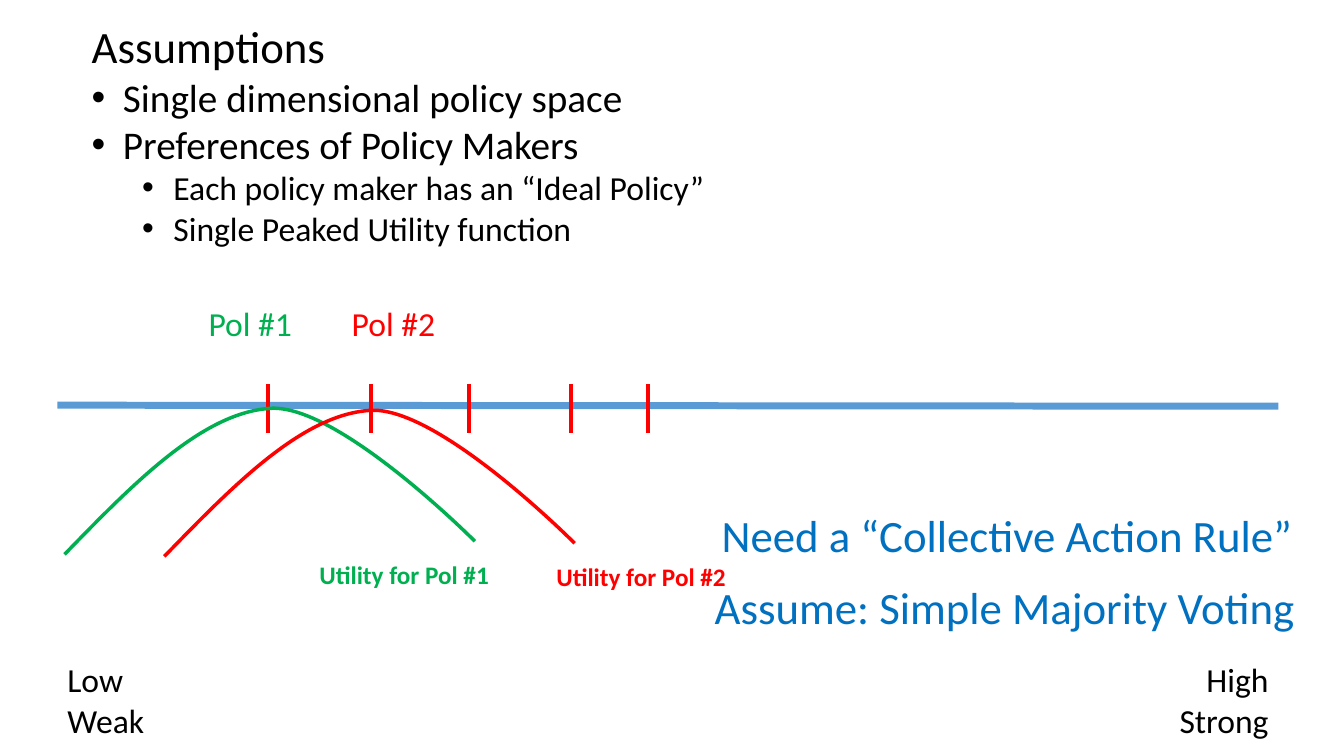
from lxml.etree import Element, SubElement
from pptx import Presentation
from pptx.dml.color import RGBColor
from pptx.enum.shapes import MSO_CONNECTOR
from pptx.enum.text import MSO_ANCHOR, MSO_AUTO_SIZE, PP_ALIGN
from pptx.oxml.ns import qn
from pptx.util import Inches, Pt

FONT = "Calibri"
BLACK, GREEN, RED = "000000", "00B050", "FF0000"
AXIS_BLUE, TEXT_BLUE = "5B9BD5", "0070C0"


def color(hex_code):
    return RGBColor.from_string(hex_code)


def prepare_frame(shape, wrap=True):
    frame = shape.text_frame
    frame.word_wrap = wrap
    frame.auto_size = MSO_AUTO_SIZE.SHAPE_TO_FIT_TEXT
    frame.vertical_anchor = MSO_ANCHOR.TOP
    return frame


def write_line(frame, index, text, size, hex_code, align=PP_ALIGN.LEFT, bold=False):
    para = frame.paragraphs[0] if index == 0 else frame.add_paragraph()
    para.alignment = align
    para.space_before = para.space_after = Pt(0)
    span = para.add_run()
    span.text = text
    span.font.name = FONT
    span.font.size = Pt(size)
    span.font.bold = bold
    span.font.color.rgb = color(hex_code)
    return para


def add_label(page, box, lines, size, hex_code, align=PP_ALIGN.LEFT,
              bold=False, wrap=True):
    label = page.shapes.add_textbox(*map(Inches, box))
    frame = prepare_frame(label, wrap)
    for index, text in enumerate(lines):
        write_line(frame, index, text, size, hex_code, align, bold)


def set_indent(para, margin, indent):
    properties = para._p.get_or_add_pPr()
    properties.set("marL", str(Inches(margin)))
    properties.set("indent", str(Inches(indent)))
    return properties


def set_bullet(para, level):
    para.level = level
    properties = set_indent(para, 0.31 + 0.5 * level, -0.31)
    SubElement(properties, qn("a:buFont")).set("typeface", "Arial")
    SubElement(properties, qn("a:buChar")).set("char", "•")


def add_line(page, start, end, hex_code, weight):
    line = page.shapes.add_connector(
        MSO_CONNECTOR.STRAIGHT, *map(Inches, (*start, *end)))
    line.line.color.rgb = color(hex_code)
    line.line.width = Pt(weight)
    SubElement(line._element.spPr, qn("a:effectLst"))


def add_assumptions(page, box):
    # The heading belongs to the list, so the body holds both
    title = page.shapes.title._element
    title.getparent().remove(title)
    body = page.placeholders[1]
    body.left, body.top, body.width, body.height = map(Inches, box)
    frame = prepare_frame(body)

    # Heading
    heading = write_line(frame, 0, "Assumptions", 32, BLACK)
    SubElement(set_indent(heading, 0, 0), qn("a:buNone"))

    # Two-level list
    points = [
        ("Single dimensional policy space", 0),
        ("Preferences of Policy Makers", 0),
        ("Each policy maker has an “Ideal Policy”", 1),
        ("Single Peaked Utility function", 1),
    ]
    for index, (text, level) in enumerate(points, start=1):
        para = write_line(frame, index, text, 28 - 4 * level, BLACK)
        set_bullet(para, level)


def add_policy_axis(page, box):
    left, top, width, height = box

    # Axis and ideal-policy ticks
    add_line(page, (left, top), (left + width, top + 0.01), AXIS_BLUE, 5)
    for offset in (2.09, 3.11, 4.08, 5.09, 5.86):
        tick = left + offset
        add_line(page, (tick, top - 0.21), (tick, top + 0.28), RED, 3)

    # Policy makers
    for name, offset, hex_code in (("Pol #1", 1.4, GREEN), ("Pol #2", 2.82, RED)):
        add_label(page, (left + offset, top - 1.06, 1.03, 0.5),
                  [name], 24, hex_code, wrap=False)

    # Ends of the scale
    end_width, end_height = 3.64, 0.91
    end_top = top + height - end_height
    add_label(page, (left, end_top, end_width, end_height),
              ["Low", "Weak"], 24, BLACK)
    add_label(page, (left + width - end_width, end_top, end_width, end_height),
              ["High", "Strong"], 24, BLACK, PP_ALIGN.RIGHT)


def bend_segment(segment, controls):
    bend = Element(qn("a:cubicBezTo"))
    for x, y in controls:
        point = SubElement(bend, qn("a:pt"))
        point.set("x", str(Inches(x)))
        point.set("y", str(Inches(y)))
    segment.getparent().replace(segment, bend)


def add_utility_curve(page, box, name, label_offset, hex_code):
    left, top, width, height = box
    peak, tail = (2.06, 0), (width, 1.32)
    rise = [(0.69, 0.74), (1.38, 0.03), peak]
    fall = [(2.74, -0.02), tail, tail]

    # Single-peaked curve
    builder = page.shapes.build_freeform(Inches(left), Inches(top + height))
    builder.add_line_segments(
        [(Inches(left + x), Inches(top + y)) for x, y in (peak, tail)], close=False)
    curve = builder.convert_to_shape()
    segments = list(curve._element.iter(qn("a:lnTo")))
    for segment, controls in zip(segments, (rise, fall)):
        bend_segment(segment, controls)
    curve.shadow.inherit = False
    curve.fill.background()
    curve.line.color.rgb = color(hex_code)
    curve.line.width = Pt(2.5)

    # Curve name
    add_label(page, (left + label_offset, top + height, 3.6, 0.4),
              [name], 18, hex_code, bold=True)


def add_conclusions(page, box):
    left, top, width, height = box
    add_label(page, (left + 0.07, top, width, height),
              ["Need a “Collective Action Rule”"], 32, TEXT_BLUE)
    add_label(page, (left, top + 0.71, width, height),
              ["Assume: Simple Majority Voting"], 32, TEXT_BLUE)


def main():
    deck = Presentation()
    deck.slide_width, deck.slide_height = Inches(13.33), Inches(7.5)
    page = deck.slides.add_slide(deck.slide_layouts[1])
    add_assumptions(page, (0.81, 0.14, 11.87, 2.39))
    add_policy_axis(page, (0.57, 4.02, 12.11, 3.38))
    add_utility_curve(page, (0.64, 4.05, 4.07, 1.45), "Utility for Pol #1", 2.43, GREEN)
    add_utility_curve(page, (1.63, 4.07, 4.07, 1.45), "Utility for Pol #2", 3.79, RED)
    add_conclusions(page, (6.99, 4.99, 6.27, 0.64))
    deck.save("out.pptx")


if __name__ == "__main__":
    main()
